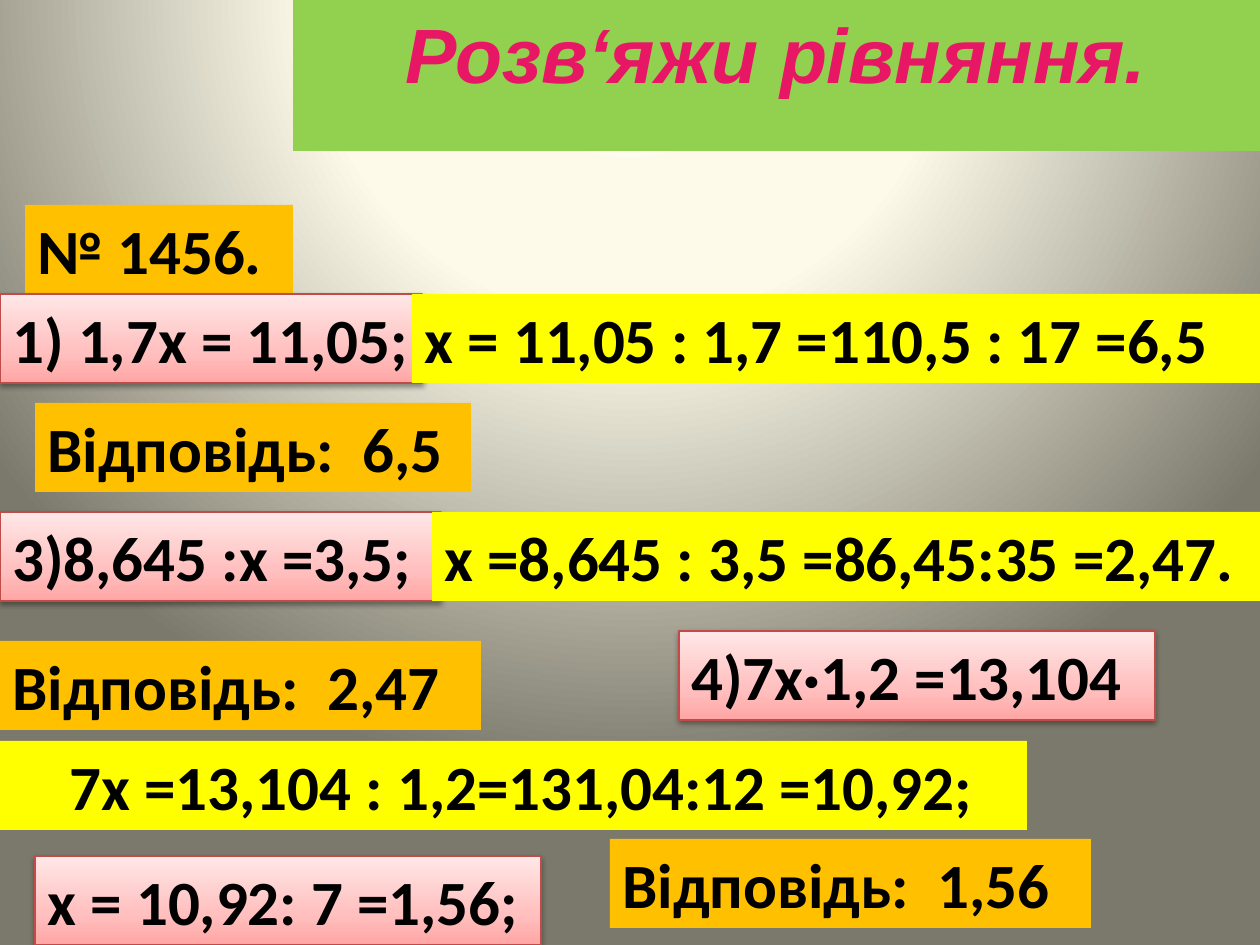
from lxml import etree
from pptx import Presentation
from pptx import util as u
from pptx.dml.color import RGBColor
from pptx.enum import text
from pptx.oxml.ns import nsdecls, qn
from pptx.oxml import parse_xml

PX_PER_INCH = 126
COLORS = {
    "banner": "92D050",
    "heading": "E81766",
    "answer": "FFC000",
    "solution": "FFFF00",
    "ink": "000000",
    "equation_line": "BF4C48",
}
EQUATION_STOPS = [(0, "FFA6A5"), (35, "FFC0BF"), (100, "FFE7E7")]
BACKDROP_STOPS = [(0, "FEFCEE"), (40, "FDFAEA"), (100, "7B796B")]
UPWARD = '<a:lin ang="16200000" scaled="0"/>'
SPOTLIGHT = ('<a:path path="circle"><a:fillToRect l="50000" t="-80000" '
             'r="50000" b="180000"/></a:path>')
ROW_HEIGHT = 89

CARDS = [
    ("answer", 25, 205, 268, "№ 1456."),
    ("equation", 0, 294, 422, "1) 1,7х = 11,05;"),
    ("solution", 412, 294, 848, "х = 11,05 : 1,7 =110,5 : 17 =6,5"),
    ("answer", 35, 403, 436, "Відповідь:  6,5"),
    ("equation", 0, 512, 441, "3)8,645 :х =3,5;"),
    ("solution", 432, 512, 828, "х =8,645 : 3,5 =86,45:35 =2,47."),
    ("answer", 0, 641, 481, "Відповідь:  2,47"),
    ("equation", 679, 631, 476, "4)7х·1,2 =13,104"),
    ("solution", 0, 741, 1027, "7х =13,104 : 1,2=131,04:12 =10,92;"),
    ("equation", 35, 856, 506, "х = 10,92: 7 =1,56;"),
    ("answer", 610, 839, 481, "Відповідь:  1,56"),
]
INDENTS = {"7х =13,104 : 1,2=131,04:12 =10,92;": 57}


def px(length):
    return u.Emu(round(length * 914400 / PX_PER_INCH))


def rgb(name):
    return RGBColor.from_string(COLORS[name])


def use_gradient(properties, stops, direction):
    stop_xml = "".join(
        f'<a:gs pos="{percent * 1000}"><a:srgbClr val="{color}"/></a:gs>'
        for percent, color in stops)
    gradient = parse_xml(
        f'<a:gradFill {nsdecls("a")} rotWithShape="1">'
        f'<a:gsLst>{stop_xml}</a:gsLst>{direction}</a:gradFill>')
    properties.replace(properties.find(qn("a:solidFill")), gradient)


def add_soft_shadow(card):
    card.shadow.inherit = False
    effects = card.element.spPr.find(qn("a:effectLst"))
    shadow = etree.SubElement(
        effects, qn("a:outerShdw"), blurRad=str(u.Pt(3.1)),
        dist=str(u.Pt(1.6)), dir="5400000", rotWithShape="0")
    color = etree.SubElement(shadow, qn("a:srgbClr"), val=COLORS["ink"])
    etree.SubElement(color, qn("a:alpha"), val="38000")


def write(card, wording, *, size=36, font="Calibri", color="ink",
          italic=False, align=text.PP_ALIGN.LEFT, wrap=True, indent=0):
    frame = card.text_frame
    frame.word_wrap = wrap
    frame.vertical_anchor = text.MSO_ANCHOR.TOP
    line = frame.paragraphs[0]
    line.alignment = align
    if indent:
        line._p.get_or_add_pPr().set("marL", str(px(indent)))
    run = line.add_run()
    run.text = wording
    run.font.name = font
    run.font.size = u.Pt(size)
    run.font.bold = True
    run.font.italic = italic
    run.font.color.rgb = rgb(color)


def add_panel(slide, left, top, width, height, color):
    panel = slide.shapes.add_textbox(px(left), px(top), px(width), px(height))
    panel.fill.solid()
    panel.fill.fore_color.rgb = rgb(color)
    return panel


def add_equation(slide, left, top, width):
    equation = add_panel(slide, left, top, width, ROW_HEIGHT, "solution")
    use_gradient(equation.element.spPr, EQUATION_STOPS, UPWARD)
    equation.line.color.rgb = rgb("equation_line")
    equation.line.width = u.Pt(0.75)
    add_soft_shadow(equation)
    return equation


def paint_backdrop(slide):
    slide.background.fill.solid()
    slide.background.fill.fore_color.rgb = rgb("ink")
    properties = slide.element.find(".//" + qn("p:bgPr"))
    use_gradient(properties, BACKDROP_STOPS, SPOTLIGHT)


def main():
    deck = Presentation()
    deck.slide_width, deck.slide_height = px(1260), px(945)
    slide = deck.slides.add_slide(deck.slide_layouts[6])
    paint_backdrop(slide)

    banner = add_panel(slide, 293, 0, 967, 151, "banner")
    write(banner, "Розв‘яжи рівняння.", size=44, font="Arial",
          color="heading", italic=True, align=text.PP_ALIGN.CENTER, wrap=False)

    for role, left, top, width, wording in CARDS:
        if role == "equation":
            card = add_equation(slide, left, top, width)
        else:
            card = add_panel(slide, left, top, width, ROW_HEIGHT, role)
        write(card, wording, indent=INDENTS.get(wording, 0))

    deck.save("out.pptx")


if __name__ == "__main__":
    main()
